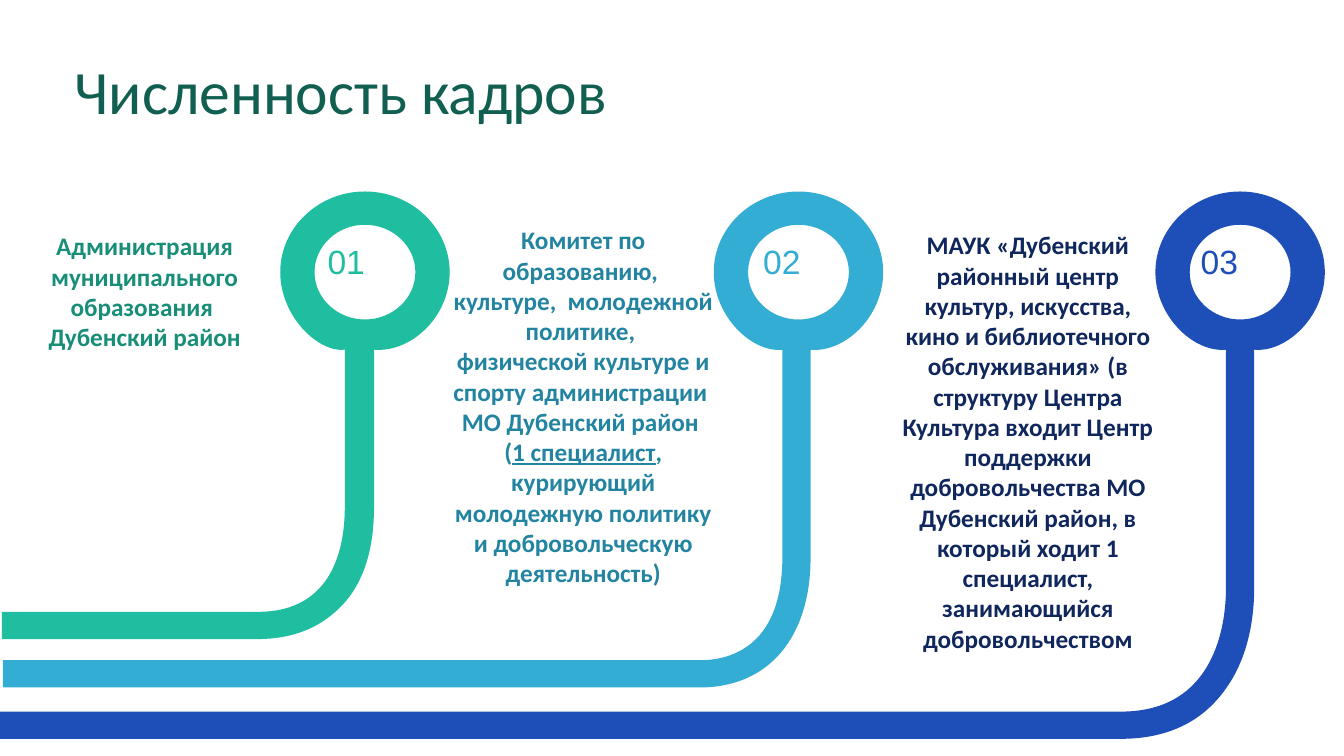
from lxml import etree
from pptx import Presentation
from pptx.dml.color import RGBColor
from pptx.enum import text
from pptx.oxml.ns import qn
from pptx.util import Inches, Pt

GREEN, CYAN, BLUE = (RGBColor.from_string(c) for c in ("20BEA0", "33ADD3", "1E4EB8"))
DARK_GREEN, DARK_CYAN, NAVY = (RGBColor.from_string(c) for c in ("188E78", "2384A2", "0F275C"))
TITLE_GREEN = RGBColor.from_string("105F50")

# Content: paragraphs are lists of (text, format) runs; "\n" is a line break.
# A bend is a start point followed by curves of three points each.
TITLE = "Численность кадров"
UNDER = {"underline": True}
STAFF = [
    {"number": "03", "color": BLUE, "text_color": NAVY,
     "box": (8.82, 2.23, 2.75, 4.34), "number_x": 11.81, "ring_x": 12.3,
     "paragraphs": [[("МАУК «Дубенский районный центр культур, искусства, кино и "
                      "библиотечного обслуживания» (в структуру Центра Культура входит "
                      "Центр поддержки добровольчества МО Дубенский район, в который ходит "
                      "1 специалист, занимающийся добровольчеством", {})]],
     "left": 0,
     "inner": [(12.16, 5.83), (12.16, 6.2), (12.05, 7.06), (11.12, 7.06)],
     "outer": [(11.12, 7.33), (11.58, 7.33), (11.93, 7.16), (12.16, 6.83),
               (12.39, 6.51), (12.44, 6.11), (12.44, 5.83)]},
    {"number": "02", "color": CYAN, "text_color": DARK_CYAN,
     "box": (4.35, 2.18, 2.87, 3.74), "number_x": 7.47, "ring_x": 7.92,
     "paragraphs": [[("Комитет по образованию, ", {})],
                    [("культуре,  молодежной политике, ", {})],
                    [("физической культуре и спорту администрации ", {})],
                    [("МО Дубенский район ", {}), ("\n", {}), ("(", {}),
                     ("1 специалист", UNDER),
                     (", курирующий молодежную политику и добровольческую деятельность)", {})]],
     "left": 0.03,
     "inner": [(7.76, 5.53), (7.76, 6.46), (7.19, 6.55), (6.94, 6.55)],
     "outer": [(6.94, 6.82), (7.62, 6.82), (8.04, 6.33), (8.04, 5.53)]},
    {"number": "01", "color": GREEN, "text_color": DARK_GREEN,
     "box": (0, 2.24, 2.87, 1.31), "number_x": 3.15, "ring_x": 3.62,
     "paragraphs": [[("Администрация муниципального образования ", {}), ("\n", {}),
                     ("Дубенский район", {})]],
     "left": 0.02,
     "inner": [(3.42, 5.03), (3.42, 5.42), (3.31, 6.07), (2.56, 6.07)],
     "outer": [(2.56, 6.34), (2.76, 6.34), (3.05, 6.3), (3.29, 6.1),
               (3.57, 5.88), (3.71, 5.52), (3.71, 5.03)]},
]
RING_Y, RING_RX, RING_RY = 2.7, 0.84, 0.8
HOLE_RX, HOLE_RY = 0.5, 0.47
NECK_Y = 3.47
ARC = 0.55  # control-point distance of a quarter ellipse, as a share of its radius


def curves(points):
    """Start point and curves as (tag, points) steps."""
    return [("cubicBezTo", points[i:i + 3]) for i in range(1, len(points), 3)]


def ellipse_points(cx, rx, ry):
    """Quarter curves from the top, anticlockwise."""
    unit = [(0, -1), (-ARC, -1), (-1, -ARC), (-1, 0), (-1, ARC), (-ARC, 1), (0, 1),
            (ARC, 1), (1, ARC), (1, 0), (1, -ARC), (ARC, -1), (0, -1)]
    return [(cx + rx * x, RING_Y + ry * y) for x, y in unit]


def road_steps(item):
    """Hole of the ring, then the outline of ring and pipe."""
    hole = ellipse_points(item["ring_x"], HOLE_RX, HOLE_RY)
    ring = ellipse_points(item["ring_x"], RING_RX, RING_RY)
    inner, outer, left = item["inner"], item["outer"], item["left"]
    to_neck = ring[:6] + [(inner[0][0], NECK_Y)]
    from_neck = [(outer[-1][0], NECK_Y)] + ring[7:]
    return [("moveTo", hole[:1]), *curves(hole), ("close", []),
            ("moveTo", ring[:1]), *curves(to_neck),
            ("lnTo", inner[:1]), *curves(inner),
            ("lnTo", [(left, inner[-1][1])]), ("lnTo", [(left, outer[0][1])]),
            ("lnTo", outer[:1]), *curves(outer),
            ("lnTo", from_neck[:1]), *curves(from_neck), ("close", [])]


def add_road(slide, item):
    steps = road_steps(item)
    ends = [(Inches(pts[-1][0]), Inches(pts[-1][1])) for tag, pts in steps if pts]
    builder = slide.shapes.build_freeform(*ends[0])
    builder.add_line_segments(ends[1:], close=True)
    sp = builder.convert_to_shape()
    # Turn the straight outline into curves
    outline = sp._element.find(".//" + qn("a:path"))
    for child in list(outline):
        outline.remove(child)
    for tag, points in steps:
        step = etree.SubElement(outline, qn("a:" + tag))
        for x, y in points:
            etree.SubElement(step, qn("a:pt"), x=str(Inches(x) - sp.left),
                             y=str(Inches(y) - sp.top))
    sp.shadow.inherit = False
    sp.fill.solid()
    sp.fill.fore_color.rgb = item["color"]
    sp.line.fill.background()


def set_font(font, color, **formats):
    font.color.rgb = color
    for name, value in formats.items():
        setattr(font, name, value)


def add_text(slide, box, paragraphs, color, align, wrap, **formats):
    tf = slide.shapes.add_textbox(*map(Inches, box)).text_frame
    tf.word_wrap = wrap
    tf.auto_size = text.MSO_AUTO_SIZE.SHAPE_TO_FIT_TEXT
    for i, runs in enumerate(paragraphs):
        p = tf.paragraphs[0] if i == 0 else tf.add_paragraph()
        p.alignment = align
        set_font(p.font, color, **formats)
        for words, extra in runs:
            if words == "\n":
                p.add_line_break()
                continue
            r = p.add_run()
            r.text = words
            set_font(r.font, color, **formats, **extra)


def main():
    prs = Presentation()
    prs.slide_width, prs.slide_height = Inches(13.33), Inches(7.5)
    slide = prs.slides.add_slide(prs.slide_layouts[5])

    # Title
    title = slide.shapes.title
    title.left, title.top, title.width, title.height = map(Inches, (0.64, 0.56, 9, 0.85))
    tf = title.text_frame
    tf.text = TITLE
    tf.auto_size = text.MSO_AUTO_SIZE.NONE
    tf.vertical_anchor = text.MSO_ANCHOR.TOP
    p = tf.paragraphs[0]
    p.alignment, p.line_spacing = text.PP_ALIGN.LEFT, 0.9
    set_font(p.runs[0].font, TITLE_GREEN, name="Calibri", size=Pt(44))

    # Roads with rings, numbers and descriptions
    for item in STAFF:
        add_road(slide, item)
        add_text(slide, (item["number_x"], 2.34, 0.65, 0.54), [[(item["number"], {})]],
                 item["color"], text.PP_ALIGN.LEFT, False, name="Arial", size=Pt(24))
        add_text(slide, item["box"], item["paragraphs"], item["text_color"],
                 text.PP_ALIGN.CENTER, True, name="Calibri", size=Pt(18), bold=True)

    prs.save("out.pptx")


if __name__ == "__main__":
    main()
